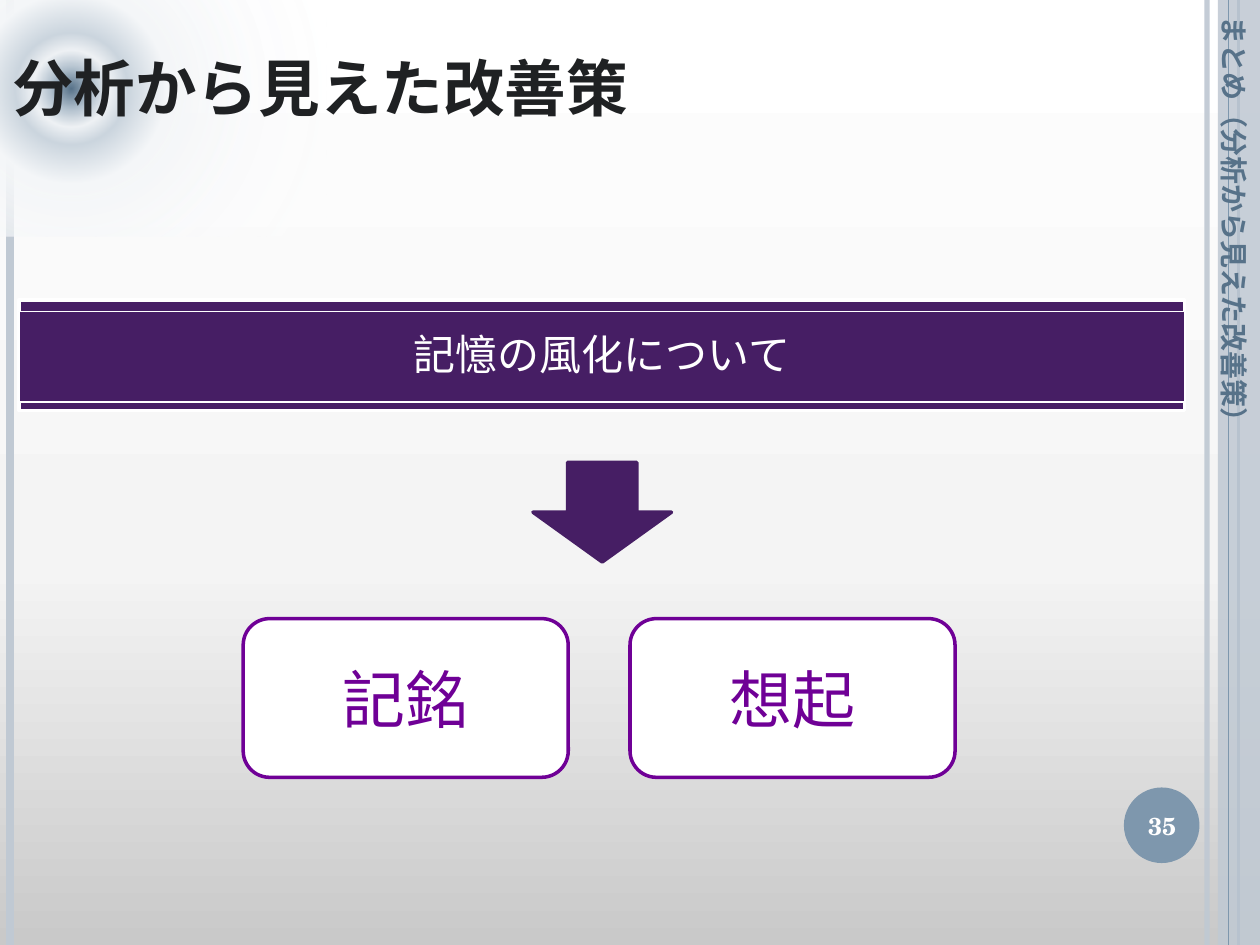
from dataclasses import dataclass

from lxml import etree
from pptx import Presentation
from pptx import util as u
from pptx.dml.color import RGBColor
from pptx.enum import shapes, text
from pptx.oxml.ns import qn

COLOURS = {
    "ink": "1F2123", "white": "FFFFFF", "rail": "C0C9D3", "steel": "7E97AD",
    "slate": "577289", "plum": "461E64", "violet": "6F0096",
}
GOTHIC = "Noto Sans CJK JP"
SCHOLA = "TeX Gyre Schola"
SLIDE_WIDTH, SLIDE_HEIGHT = 720, 540


@dataclass
class Frame:
    left: float
    top: float
    width: float
    height: float

    def lengths(self) -> list:
        return [u.Pt(v) for v in (self.left, self.top, self.width, self.height)]


@dataclass
class Rail:
    x: float
    colour: str
    weight: float
    opacity: int = 100


@dataclass
class Label:
    words: str
    size: float
    colour: str
    font: str = GOTHIC
    bold: bool = False
    align: text.PP_ALIGN = text.PP_ALIGN.CENTER
    anchor: text.MSO_ANCHOR = text.MSO_ANCHOR.MIDDLE
    small_caps: bool = False


def rgb(name: str) -> RGBColor:
    return RGBColor.from_string(COLOURS[name])


def set_opacity(element, percent: int) -> None:
    """Give the first solid colour under element an alpha value."""
    if percent < 100:
        colour = next(element.iter(qn("a:srgbClr")))
        etree.SubElement(colour, qn("a:alpha"), val=str(percent * 1000))


def set_gradient(element, stops: list, radial: bool = False) -> None:
    """Rewrite the gradient under element; a stop is (position, hex, opacity)."""
    gradient = next(element.iter(qn("a:gradFill")))
    for child in list(gradient):
        gradient.remove(child)
    stop_list = etree.SubElement(gradient, qn("a:gsLst"))
    for position, colour, opacity in stops:
        stop = etree.SubElement(stop_list, qn("a:gs"), pos=str(position * 1000))
        etree.SubElement(stop, qn("a:srgbClr"), val=colour)
        set_opacity(stop, opacity)
    if radial:
        circle = etree.SubElement(gradient, qn("a:path"), path="circle")
        etree.SubElement(circle, qn("a:fillToRect"),
                         {side: "50000" for side in "ltrb"})
    else:
        etree.SubElement(gradient, qn("a:lin"), ang="16200000", scaled="0")


def add_rail(page, rail: Rail) -> None:
    line = page.shapes.add_connector(
        shapes.MSO_CONNECTOR.STRAIGHT,
        u.Pt(rail.x), u.Pt(0), u.Pt(rail.x), u.Pt(SLIDE_HEIGHT))
    line.line.color.rgb = rgb(rail.colour)
    line.line.width = u.Pt(rail.weight)
    properties = line._element.spPr
    set_opacity(properties, rail.opacity)
    etree.SubElement(properties, qn("a:effectLst"))


def add_block(page, kind, frame: Frame, fill: str, line: str = "", weight: float = 0):
    block = page.shapes.add_shape(kind, *frame.lengths())
    block.shadow.inherit = False
    block.fill.solid()
    block.fill.fore_color.rgb = rgb(fill)
    if line:
        block.line.color.rgb = rgb(line)
        block.line.width = u.Pt(weight)
    else:
        block.line.fill.background()
    return block


def write(box, label: Label):
    box.text_frame.word_wrap = True
    box.text_frame.vertical_anchor = label.anchor
    para = box.text_frame.paragraphs[0]
    para.text = label.words
    para.alignment = label.align
    para.font.size = u.Pt(label.size)
    para.font.bold = label.bold
    para.font.color.rgb = rgb(label.colour)
    para.font.name = label.font
    defaults = para._p.pPr.find(qn("a:defRPr"))
    etree.SubElement(defaults, qn("a:ea"), typeface=label.font)
    if label.small_caps:
        defaults.set("cap", "small")
    return para


def add_text(page, frame: Frame, label: Label):
    box = page.shapes.add_textbox(*frame.lengths())
    write(box, label)
    return box


def add_backdrop(page) -> None:
    page.background.fill.gradient()
    set_gradient(page._element, [(0, "C9C9C9", 100), (40, "F4F4F4", 100),
                                 (100, "FFFFFF", 100)])
    for rail in (Rail(689.76, "rail", 3, 93), Rail(5.76, "rail", 4.5),
                 Rail(707.76, "steel", 1.5)):
        add_rail(page, rail)
    margin = add_block(page, shapes.MSO_SHAPE.RECTANGLE,
                       Frame(696, 0, 24, SLIDE_HEIGHT), "rail")
    set_opacity(margin._element.spPr, 87)
    add_rail(page, Rail(702, "steel", 0.75))
    add_block(page, shapes.MSO_SHAPE.OVAL, Frame(642.24, 450, 43.2, 43.2), "steel")

    glow = add_block(page, shapes.MSO_SHAPE.RECTANGLE,
                     Frame(-105.12, -33.84, 291.6, 169.2), "white")
    glow.fill.gradient()
    set_gradient(glow._element.spPr, [
        (0, "577289", 100), (7, "B2C1CE", 100), (13, "EFF2F5", 100),
        (19, "CBD5DE", 100), (32, "F4F6F8", 100), (100, "FFFFFF", 0)], radial=True)


def add_headings(page) -> None:
    left = text.PP_ALIGN.LEFT
    add_text(page, Frame(0, 25.92, 689, 50.4),
             Label("分析から見えた改善策", 44, "ink", bold=True, align=left,
                   anchor=text.MSO_ANCHOR.BOTTOM, small_caps=True))
    section = add_text(page, Frame(537.12, 153.36, 336.24, 26.64),
                       Label("まとめ（分析から見えた改善策）", 16, "slate", bold=True,
                             align=left, anchor=text.MSO_ANCHOR.TOP))
    section.rotation = 90
    section.text_frame.margin_left = u.Pt(11)
    add_text(page, Frame(640, 451.44, 48.24, 41.04),
             Label("35", 14, "white", font=SCHOLA, bold=True))


def add_diagram(page) -> None:
    rectangle = shapes.MSO_SHAPE.RECTANGLE
    add_block(page, rectangle, Frame(10.8, 171.36, 666, 63.36), "plum", "white", 2)
    band = add_block(page, rectangle, Frame(10.8, 177.84, 666, 51.84),
                     "plum", "white", 0.75)
    para = write(band, Label("記憶の風化について", 24, "white"))
    para.line_spacing = 0.9
    add_block(page, shapes.MSO_SHAPE.DOWN_ARROW, Frame(304.56, 264.24, 79.2, 56.88),
              "plum", "plum", 2)
    for column, words in enumerate(("記銘", "想起")):
        card = add_block(page, shapes.MSO_SHAPE.ROUNDED_RECTANGLE,
                         Frame(138.96 + column * 221.04, 353.52, 185.76, 90.72),
                         "white", "violet", 2)
        write(card, Label(words, 36, "violet"))


def main() -> None:
    deck = Presentation()
    deck.slide_width, deck.slide_height = u.Pt(SLIDE_WIDTH), u.Pt(SLIDE_HEIGHT)
    page = deck.slides.add_slide(deck.slide_layouts[6])
    add_backdrop(page)
    add_headings(page)
    add_diagram(page)
    deck.save("out.pptx")


if __name__ == "__main__":
    main()
